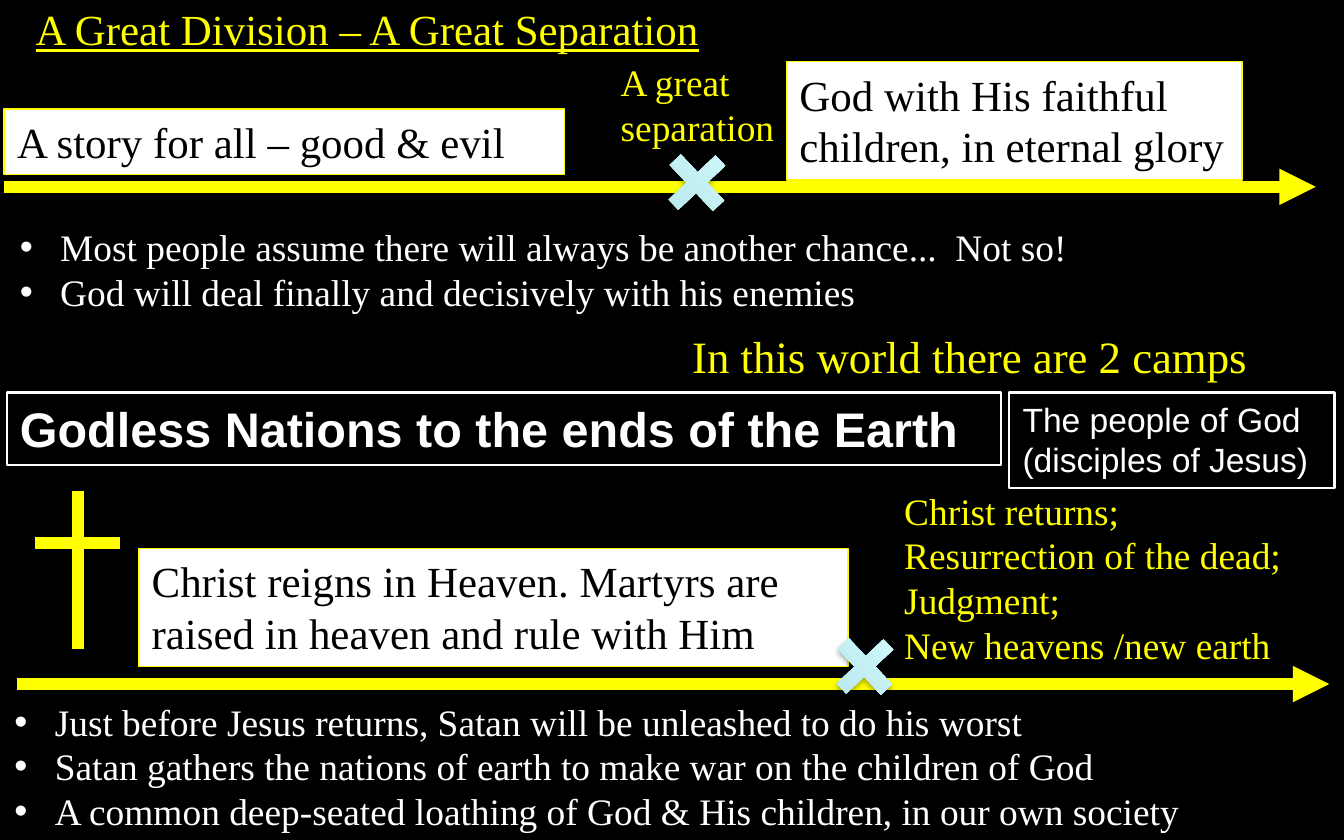
from dataclasses import dataclass
from typing import Optional

from lxml import etree
from pptx import Presentation
from pptx.dml.color import RGBColor
from pptx.enum.shapes import MSO_CONNECTOR, MSO_SHAPE
from pptx.enum.text import MSO_AUTO_SIZE, PP_ALIGN
from pptx.oxml.ns import qn
from pptx.util import Inches, Pt

LEFT, MID = PP_ALIGN.LEFT, PP_ALIGN.CENTER
GROW = MSO_AUTO_SIZE.SHAPE_TO_FIT_TEXT
PLUS = MSO_SHAPE.CROSS
LINE = MSO_CONNECTOR.STRAIGHT


@dataclass(frozen=True)
class Theme:
    black: str = "000000"
    white: str = "FFFFFF"
    gold: str = "FFFF00"
    deep: str = "B5E5E9"
    pale: str = "D3FBFF"
    serif: str = "Times New Roman"
    sans: str = "Arial"
    small: int = 18
    body: int = 20
    large: int = 23
    camp: int = 24
    loud: int = 26
    stroke: float = 6.5
    frame: float = 1.25
    hair: float = 0.75


@dataclass(frozen=True)
class Area:
    col: float
    row: float
    cols: float
    rows: float


@dataclass(frozen=True)
class Bar:
    start: tuple[float, float]
    end: tuple[float, float]
    arrow: bool = False


T = Theme()
WIDTH, HEIGHT = Inches(10), Inches(6.25)
CELL = WIDTH / 100

BARS = (
    Bar((0.3, 13.9), (97.9, 13.9), True),
    Bar((1.3, 50.9), (98.9, 50.9), True),
    Bar((5.8, 36.5), (5.8, 48.3)),
    Bar((2.6, 40.4), (8.9, 40.4)),
)
CARDS = (
    (Area(0.3, 8.1, 41.7, 4.9), "A story for all – good & evil"),
    (Area(58.5, 4.6, 33.9, 8.8), "God with His faithful children, in eternal glory"),
    (Area(10.3, 40.8, 52.8, 8.8),
     "Christ reigns in Heaven. Martyrs are raised in heaven and rule with Him"),
)
LISTS = (
    (Area(0.5, 16.2, 100, 7.7), (
        "Most people assume there will always be another chance...  Not so!",
        "God will deal finally and decisively with his enemies",
    )),
    (Area(0.1, 51.5, 100, 11.1), (
        "Just before Jesus returns, Satan will be unleashed to do his worst",
        "Satan gathers the nations of earth to make war on the children of God",
        "A common deep-seated loathing of God & His children, in our own society",
    )),
)
MARKS = (Area(49.5, 11.2, 4.7, 4.8), Area(62, 47.2, 4.7, 4.8))


def grid(count: float) -> int:
    return round(count * CELL)


def place(area: Area) -> tuple[int, ...]:
    return tuple(grid(n) for n in (area.col, area.row, area.cols, area.rows))


def tint(code: str) -> RGBColor:
    return RGBColor.from_string(code)


def write(slide, area: Area, *lines: str, size: float = T.body,
          color: str = T.gold, font: str = T.serif, bold: bool = False,
          under: bool = False, align: PP_ALIGN = LEFT, bullet: bool = False,
          fill: Optional[str] = None, edge: Optional[str] = None,
          weight: float = T.frame) -> None:
    box = slide.shapes.add_textbox(*place(area))
    if fill:
        box.fill.solid()
        box.fill.fore_color.rgb = tint(fill)
    if edge:
        box.line.color.rgb = tint(edge)
        box.line.width = Pt(weight)
    frame = box.text_frame
    frame.word_wrap = True
    frame.auto_size = GROW
    for n, line in enumerate(lines):
        para = frame.add_paragraph() if n else frame.paragraphs[0]
        para.text = line
        para.alignment = align
        for run in para.runs:
            face = run.font
            face.name, face.size = font, Pt(size)
            face.bold, face.underline = bold, under
            face.color.rgb = tint(color)
        if bullet:
            props = para._p.get_or_add_pPr()
            props.set("marL", str(Inches(0.3)))
            props.set("indent", str(Inches(-0.3)))
            etree.SubElement(props, qn("a:buFont"), typeface=T.sans)
            etree.SubElement(props, qn("a:buChar"), char="•")


def rule(slide, bar: Bar) -> None:
    ends = [grid(n) for n in bar.start + bar.end]
    link = slide.shapes.add_connector(LINE, *ends)
    link.line.color.rgb = tint(T.gold)
    link.line.width = Pt(T.stroke)
    props = link._element.spPr
    if bar.arrow:
        etree.SubElement(props.find(qn("a:ln")), qn("a:tailEnd"), type="triangle")
    etree.SubElement(props, qn("a:effectLst"))


def mark(slide, area: Area) -> None:
    sign = slide.shapes.add_shape(PLUS, *place(area))
    sign.adjustments[0] = 0.388
    sign.rotation = 46.8
    sign.fill.gradient()
    sign.fill.gradient_angle = 90
    for stop, code in zip(sign.fill.gradient_stops, (T.deep, T.pale)):
        stop.color.rgb = tint(code)
    sign.line.fill.background()
    sign.shadow.inherit = False
    glow = etree.SubElement(
        sign._element.spPr.find(qn("a:effectLst")), qn("a:outerShdw"),
        blurRad=str(Pt(3.1)), dist=str(Pt(1.8)), dir="5400000", rotWithShape="0")
    shade = etree.SubElement(glow, qn("a:srgbClr"), val=T.black)
    etree.SubElement(shade, qn("a:alpha"), val="35000")


def main() -> None:
    deck = Presentation()
    deck.slide_width, deck.slide_height = WIDTH, HEIGHT
    slide = deck.slides.add_slide(deck.slide_layouts[6])
    slide.background.fill.solid()
    slide.background.fill.fore_color.rgb = tint(T.black)

    write(slide, Area(0, -0.3, 54.7, 4.9), "A Great Division – A Great Separation",
          size=T.large, under=True, align=MID)
    for area, lines in LISTS:
        write(slide, area, *lines, color=T.white, bullet=True)
    write(slide, Area(42, 24, 60.3, 5), "In this world there are 2 camps",
          size=T.camp, align=MID)
    write(slide, Area(75.1, 29.2, 24.2, 7.1), "The people of God (disciples of Jesus)",
          size=T.small, color=T.white, font=T.sans, edge=T.white)
    write(slide, Area(0.5, 29.2, 74, 5.4), "Godless Nations to the ends of the Earth",
          size=T.loud, color=T.white, font=T.sans, bold=True, edge=T.white)
    for bar in BARS:
        rule(slide, bar)
    for area, line in CARDS:
        write(slide, area, line, size=T.large, color=T.black, fill=T.white,
              edge=T.gold, weight=T.hair)
    for area in MARKS:
        mark(slide, area)
    write(slide, Area(45.2, 3.9, 14.4, 7.7), "A great separation")
    write(slide, Area(66.3, 35.8, 32.7, 14.5), "Christ returns;",
          "Resurrection of the dead;", "Judgment;\nNew heavens /new earth")
    deck.save("out.pptx")


if __name__ == "__main__":
    main()
